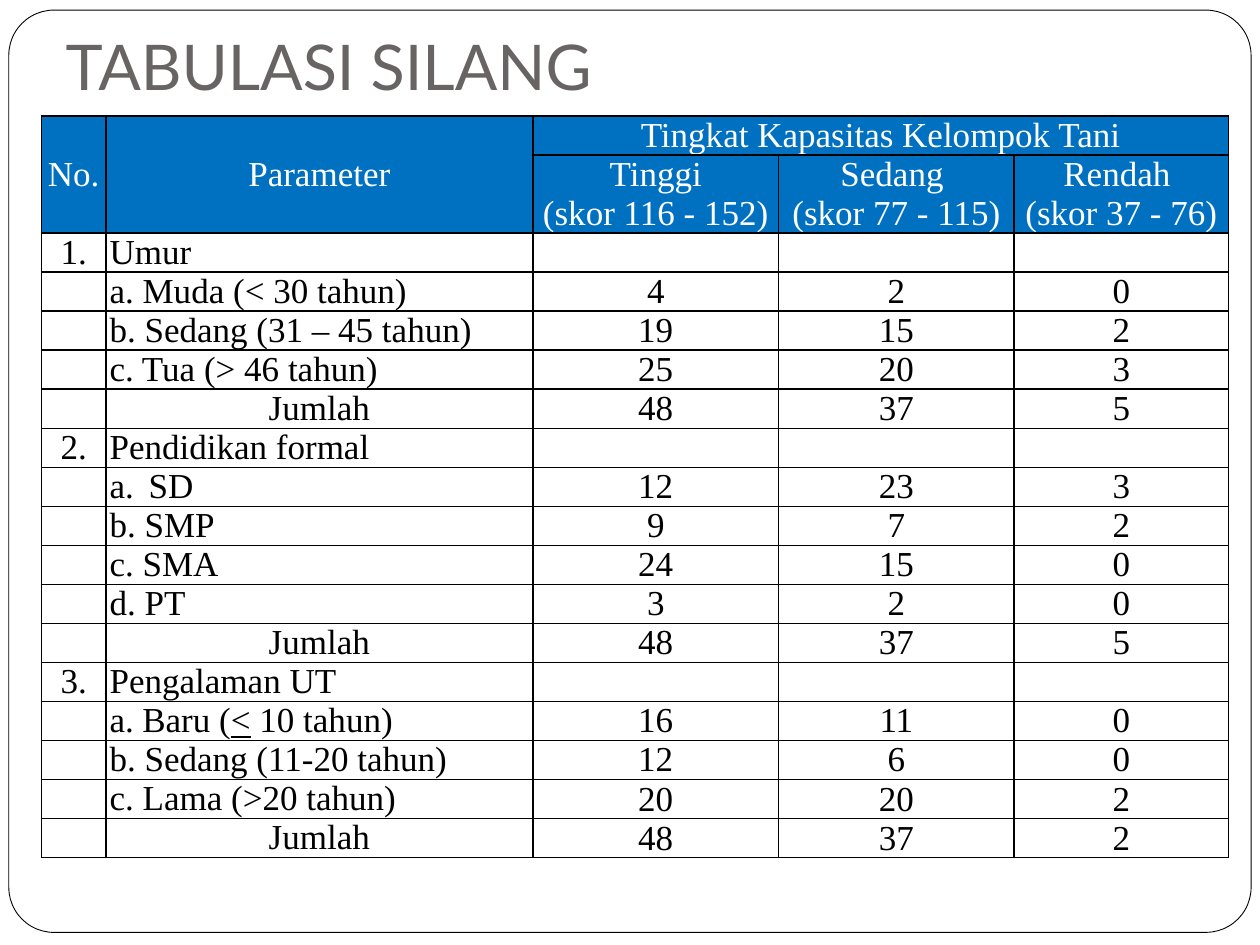
from dataclasses import dataclass
from typing import Optional

from lxml import etree
from pptx import Presentation, util as u
from pptx.dml.color import RGBColor
from pptx.enum import shapes, text
from pptx.oxml.ns import qn


@dataclass(frozen=True)
class Theme:
    white: str = "FFFFFF"
    black: str = "000000"
    header: str = "0070C0"
    title: str = "696464"
    title_font: str = "Lato"
    table_font: str = "Times New Roman"
    title_size: float = 36
    table_size: float = 20
    frame_line: float = 0.5
    border: float = 1


@dataclass(frozen=True)
class Item:
    label: str
    values: tuple
    hang: float = 0.38
    numbered: bool = False
    underlined: str = ""


@dataclass(frozen=True)
class Group:
    number: str
    name: str
    items: tuple
    total: tuple


THEME = Theme()
WIDTH, HEIGHT = 10, 7.5
COLUMNS = (0.51, 3.39, 1.95, 1.87, 1.7)
ROW = 0.31
LEVELS = ("Tinggi\n(skor 116 - 152)", "Sedang \n(skor 77 - 115)", "Rendah \n(skor 37 - 76)")
GROUPS = (
    Group("1.", "Umur", (
        Item("a. Muda (< 30 tahun)", (4, 2, 0), 0.5),
        Item("b. Sedang (31 – 45 tahun)", (19, 15, 2), 0.5),
        Item("c. Tua (> 46 tahun)", (25, 20, 3), 0.5),
    ), (48, 37, 5)),
    Group("2.", "Pendidikan formal", (
        Item("SD", (12, 23, 3), 0.31, True),
        Item("b. SMP", (9, 7, 2)),
        Item("c. SMA", (24, 15, 0)),
        Item("d. PT", (3, 2, 0)),
    ), (48, 37, 5)),
    Group("3.", "Pengalaman UT", (
        Item("Baru (< 10 tahun)", (16, 11, 0), 0.26, True, "<"),
        Item("b. Sedang (11-20 tahun)", (12, 6, 0)),
        Item("c. Lama (>20 tahun)", (20, 20, 2)),
    ), (48, 37, 2)),
)


def rgb(value: str) -> RGBColor:
    return RGBColor.from_string(value)


def format_run(r, font: str, size: float, color: str) -> None:
    r.font.name = font
    r.font.size = u.Pt(size)
    r.font.color.rgb = rgb(color)


def draw_frame(s) -> None:
    sp = s.shapes.add_shape(shapes.MSO_SHAPE.ROUNDED_RECTANGLE, u.Inches(0.07), u.Inches(0.08),
                            u.Inches(0.986 * WIDTH), u.Inches(0.976 * HEIGHT))
    sp.adjustments[0] = 0.049
    sp.shadow.inherit = False
    sp.fill.solid()
    sp.fill.fore_color.rgb = rgb(THEME.white)
    sp.line.color.rgb = rgb(THEME.black)
    sp.line.width = u.Pt(THEME.frame_line)
    s.shapes.title.element.addprevious(sp.element)


def draw_title(s, title: str) -> None:
    sp = s.shapes.title
    sp.left, sp.top, sp.width, sp.height = map(u.Inches, (0.42, 0.25, 9.08, 0.67))
    tf = sp.text_frame
    tf.text = title
    tf.auto_size = text.MSO_AUTO_SIZE.NONE
    tf.vertical_anchor = text.MSO_ANCHOR.BOTTOM
    tf.margin_left = tf.margin_right = tf.margin_bottom = u.Inches(0.1)
    tf.margin_top = u.Inches(0.05)
    p = tf.paragraphs[0]
    p.alignment = text.PP_ALIGN.LEFT
    format_run(p.runs[0], THEME.title_font, THEME.title_size, THEME.title)


def style_cell(cell, fill: Optional[str]) -> None:
    cell.margin_left = cell.margin_right = u.Inches(0.03)
    cell.margin_top = cell.margin_bottom = 0
    props = cell._tc.get_or_add_tcPr()
    for side in ("a:lnL", "a:lnR", "a:lnT", "a:lnB"):
        line = etree.SubElement(props, qn(side), w=str(u.Pt(THEME.border)))
        solid = etree.SubElement(line, qn("a:solidFill"))
        etree.SubElement(solid, qn("a:srgbClr"), val=THEME.black)
    if fill:
        cell.fill.solid()
        cell.fill.fore_color.rgb = rgb(fill)
    else:
        cell.fill.background()


def write(cell, content: str, color: str = THEME.black, centred: bool = True,
          middle: bool = False) -> None:
    cell.text = content
    if middle:
        cell.vertical_anchor = text.MSO_ANCHOR.MIDDLE
    for p in cell.text_frame.paragraphs:
        p.alignment = text.PP_ALIGN.CENTER if centred else text.PP_ALIGN.LEFT
        for r in p.runs:
            format_run(r, THEME.table_font, THEME.table_size, color)
        if not p.runs:
            end = etree.SubElement(p._p, qn("a:endParaRPr"), sz=str(int(THEME.table_size * 100)))
            etree.SubElement(end, qn("a:latin"), typeface=THEME.table_font)


def write_item(cell, item: Item) -> None:
    write(cell, item.label, centred=False)
    p = cell.text_frame.paragraphs[0]
    if item.underlined:
        before, after = item.label.split(item.underlined)
        p.runs[0].text = before
        for part in (item.underlined, after):
            r = p.add_run()
            r.text = part
            r.font.underline = part == item.underlined
            format_run(r, THEME.table_font, THEME.table_size, THEME.black)
    props = p._p.get_or_add_pPr()
    props.set("marL", str(u.Inches(item.hang)))
    props.set("indent", str(-u.Inches(item.hang)))
    if item.numbered:
        etree.SubElement(props, qn("a:buFont"), typeface=THEME.table_font)
        etree.SubElement(props, qn("a:buAutoNum"), type="alphaLcPeriod")


def write_values(table, row: int, values: tuple) -> None:
    for col, value in enumerate(values, 2):
        write(table.cell(row, col), str(value), middle=True)


def write_header(table) -> None:
    for col, label in enumerate(("No.", "Parameter")):
        table.cell(0, col).merge(table.cell(1, col))
        write(table.cell(0, col), label, THEME.white, middle=True)
    table.cell(0, 2).merge(table.cell(0, 4))
    write(table.cell(0, 2), "Tingkat Kapasitas Kelompok Tani", THEME.white)
    for col, label in enumerate(LEVELS, 2):
        write(table.cell(1, col), label, THEME.white, middle=True)


def draw_table(s) -> None:
    count = 2 + sum(len(group.items) + 2 for group in GROUPS)
    table = s.shapes.add_table(count, len(COLUMNS), u.Inches(0.33), u.Inches(0.92),
                               u.Inches(sum(COLUMNS)), u.Inches(ROW * (count + 1))).table
    for column, width in zip(table.columns, COLUMNS):
        column.width = u.Inches(width)
    for i, row in enumerate(table.rows):
        row.height = u.Inches(ROW * (2 if i == 1 else 1))
        for cell in row.cells:
            style_cell(cell, THEME.header if i < 2 else None)
            write(cell, "")
    write_header(table)
    row = 2
    for group in GROUPS:
        write(table.cell(row, 0), group.number)
        write(table.cell(row, 1), group.name, centred=False)
        for row, item in enumerate(group.items, row + 1):
            write_item(table.cell(row, 1), item)
            write_values(table, row, item.values)
        row += 1
        write(table.cell(row, 1), "Jumlah")
        write_values(table, row, group.total)
        row += 1


def main() -> None:
    prs = Presentation()
    prs.slide_width, prs.slide_height = u.Inches(WIDTH), u.Inches(HEIGHT)
    s = prs.slides.add_slide(prs.slide_layouts.get_by_name("Title Only"))
    draw_frame(s)
    draw_title(s, "TABULASI SILANG")
    draw_table(s)
    prs.save("out.pptx")


if __name__ == "__main__":
    main()
